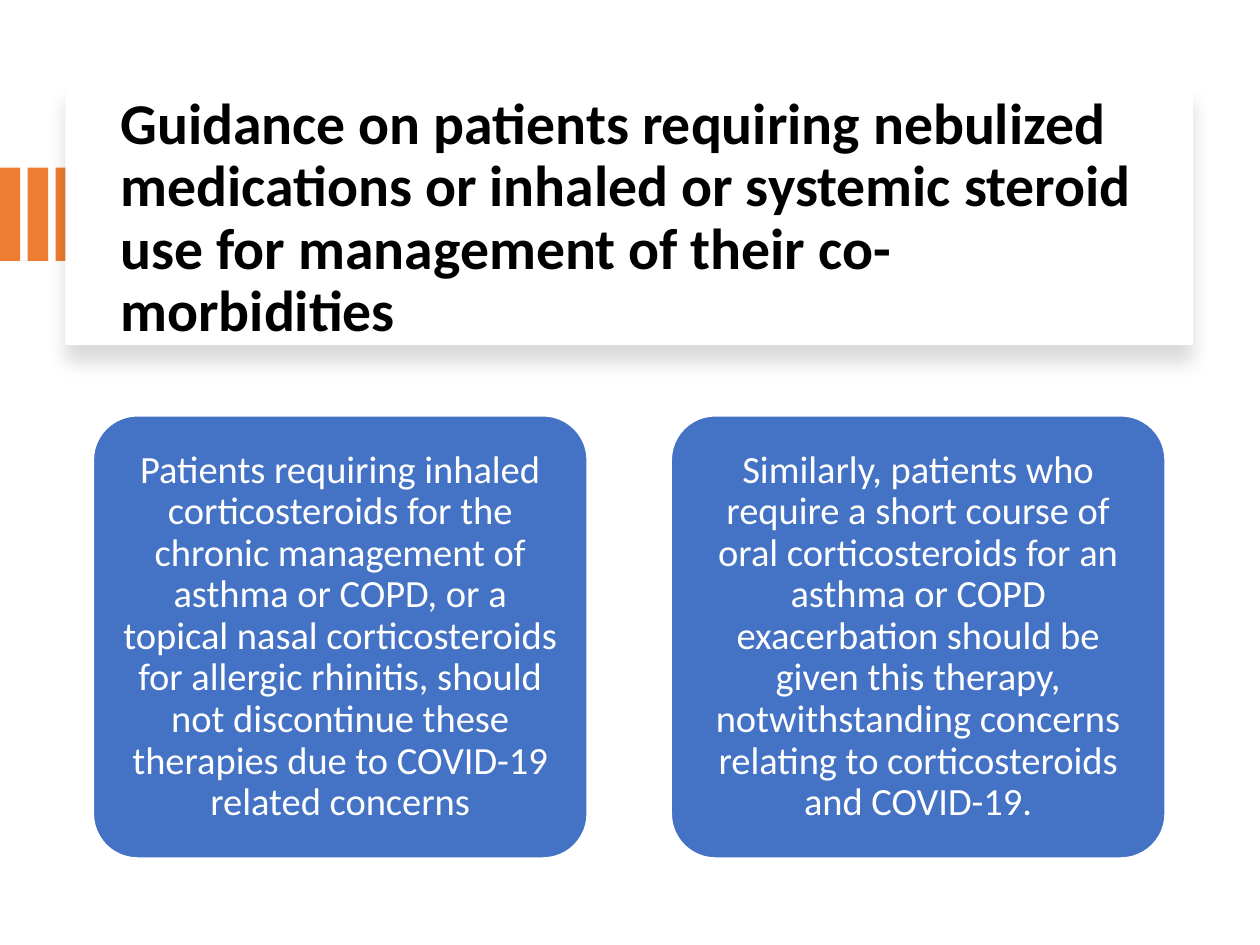
"""Build a slide on steroid guidance with a raised title panel and two cards."""
from dataclasses import dataclass

from lxml.etree import SubElement
from pptx import Presentation
from pptx.dml.color import RGBColor as RGB
from pptx.enum.shapes import MSO_SHAPE as SHAPE
from pptx.enum.text import MSO_ANCHOR as ANCHOR, PP_ALIGN as ALIGN
from pptx.oxml.ns import qn
from pptx.util import Cm, Pt


@dataclass(frozen=True)
class Theme:
    font: str = "Calibri"
    white: RGB = RGB(0xFF, 0xFF, 0xFF)
    black: RGB = RGB(0, 0, 0)
    accent: RGB = RGB(0xED, 0x7D, 0x31)
    card: RGB = RGB(0x44, 0x72, 0xC4)
    title_size: Pt = Pt(33)
    body_size: Pt = Pt(22)


TITLE = ("Guidance on patients requiring nebulized medications or inhaled or "
         "systemic steroid use for management of their co-morbidities")
CARDS = (
    "Patients requiring inhaled corticosteroids for the chronic management of "
    "asthma or COPD, or a topical nasal corticosteroids for allergic rhinitis, "
    "should not discontinue these therapies due to COVID-19 related concerns",
    "Similarly, patients who require a short course of oral corticosteroids for "
    "an asthma or COPD exacerbation should be given this therapy, "
    "notwithstanding concerns relating to corticosteroids and COVID-19.",
)


class SlideBuilder:
    def __init__(self, slide, theme):
        self.s = slide
        self.theme = theme

    def box(self, kind, left, top, width, height, fill):
        sp = self.s.shapes.add_shape(kind, Cm(left), Cm(top), Cm(width), Cm(height))
        sp.shadow.inherit = False
        sp.fill.solid()
        sp.fill.fore_color.rgb = fill
        sp.line.fill.background()
        return sp

    def set_text(self, tf, text, size, color, align, bold=False):
        tf.word_wrap = True
        tf.vertical_anchor = ANCHOR.MIDDLE
        p = tf.paragraphs[0]
        p.text = text
        p.alignment = align
        p.line_spacing = 0.9
        p.font.name = self.theme.font
        p.font.size = size
        p.font.bold = bold
        p.font.color.rgb = color

    def bar(self, left):
        self.box(SHAPE.RECTANGLE, left, 3.38, 0.41, 1.88, self.theme.accent)

    def panel(self):
        sp = self.box(SHAPE.RECTANGLE, 1.32, 1.7, 22.73, 5.26, self.theme.white)
        effects = sp.element.spPr.find(qn("a:effectLst"))
        shadow = SubElement(effects, qn("a:outerShdw"), blurRad=str(Pt(11)),
                            dist=str(Pt(10)), dir="5400000", algn="t", rotWithShape="0")
        color = SubElement(shadow, qn("a:srgbClr"), val=str(self.theme.black))
        SubElement(color, qn("a:alpha"), val="15000")

    def title(self, text):
        sp = self.s.shapes.add_textbox(Cm(2.18), Cm(2.26), Cm(21.18), Cm(4.32))
        self.set_text(sp.text_frame, text, self.theme.title_size, self.theme.black,
                      ALIGN.LEFT, bold=True)

    def card(self, left, text):
        sp = self.box(SHAPE.ROUNDED_RECTANGLE, left, 8.38, 9.96, 8.92, self.theme.card)
        sp.adjustments[0] = 0.1
        sp.line.color.rgb = self.theme.white
        sp.line.width = Pt(1)
        tf = sp.text_frame
        tf.margin_left = tf.margin_right = tf.margin_top = tf.margin_bottom = Cm(0.23)
        self.set_text(tf, text, self.theme.body_size, self.theme.white, ALIGN.CENTER)


def main():
    prs = Presentation()
    prs.slide_width, prs.slide_height = Cm(25.4), Cm(19.05)
    slide = SlideBuilder(prs.slides.add_slide(prs.slide_layouts[6]), Theme())
    for i in range(3):
        slide.bar(i * 0.56)
    slide.panel()
    slide.title(TITLE)
    for i, text in enumerate(CARDS):
        slide.card(1.88 + i * 11.65, text)
    prs.save("out.pptx")


if __name__ == "__main__":
    main()
